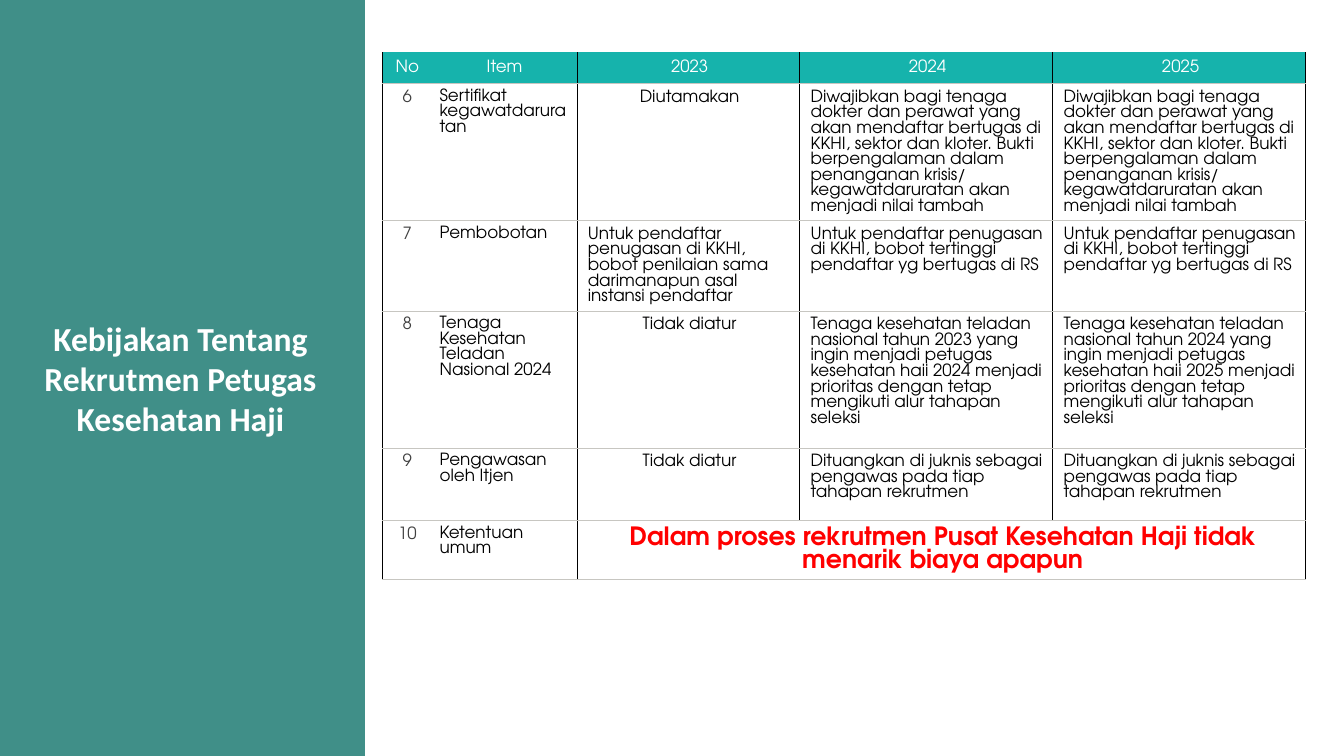
from dataclasses import dataclass
from itertools import product

from lxml import etree
from pptx import Presentation
from pptx import util as u
from pptx.dml.color import RGBColor
from pptx.enum import shapes, text
from pptx.oxml import ns

GRID_COLUMNS, GRID_ROWS = 1333, 750
WIDTH, HEIGHT = u.Inches(13.33), u.Inches(7.5)

PANEL_GREEN = RGBColor(0x40, 0x8F, 0x88)
HEADER_TEAL = RGBColor(0x16, 0xB3, 0xAC)
WHITE = RGBColor(0xFF, 0xFF, 0xFF)
BLACK = RGBColor(0x00, 0x00, 0x00)
NUMBER_GRAY = RGBColor(0x3F, 0x3F, 0x3F)
RULE_GRAY = RGBColor(0xC7, 0xC6, 0xC1)
RED = RGBColor(0xFF, 0x00, 0x00)

TABLE_FONT = "TeX Gyre Adventor"
TITLE_FONT = "Calibri"
LEFT, CENTER = text.PP_ALIGN.LEFT, text.PP_ALIGN.CENTER
TOP, MIDDLE = text.MSO_ANCHOR.TOP, text.MSO_ANCHOR.MIDDLE

COLUMN_SPANS = [47, 146, 221, 251, 251]
HEADINGS = ["No", "Item", "2023", "2024", "2025"]
UNREGULATED = "Tidak diatur"
CERTIFICATE = (
    "Diwajibkan bagi tenaga dokter dan perawat yang akan mendaftar bertugas di KKHI, "
    "sektor dan kloter. Bukti berpengalaman dalam penanganan krisis/ kegawatdaruratan "
    "akan menjadi nilai tambah"
)
WEIGHTING = "Untuk pendaftar penugasan di KKHI, bobot tertinggi pendaftar yg bertugas di RS"
EXEMPLARY = (
    "Tenaga kesehatan teladan nasional tahun {} yang ingin menjadi petugas kesehatan "
    "haii {} menjadi prioritas dengan tetap mengikuti alur tahapan seleksi"
)
OVERSIGHT = "Dituangkan di juknis sebagai pengawas pada tiap tahapan rekrutmen"
NO_FEE = "Dalam proses rekrutmen Pusat Kesehatan Haji tidak menarik biaya apapun"


@dataclass(frozen=True)
class Area:
    column: float
    row: float
    columns: float
    rows: float

    def place(self) -> tuple[int, int, int, int]:
        return across(self.column), down(self.row), across(self.columns), down(self.rows)


@dataclass(frozen=True)
class Policy:
    rows: float
    item: str
    years: tuple[str, ...]
    first_align: int = CENTER


POLICIES = [
    Policy(135, "Sertifikat kegawatdaruratan", ("Diutamakan", CERTIFICATE, CERTIFICATE)),
    Policy(88, "Pembobotan", (
        "Untuk pendaftar penugasan di KKHI, bobot penilaian sama darimanapun asal "
        "instansi pendaftar", WEIGHTING, WEIGHTING), LEFT),
    Policy(136, "Tenaga Kesehatan Teladan Nasional 2024", (
        UNREGULATED, EXEMPLARY.format(2023, 2024), EXEMPLARY.format(2024, 2025))),
    Policy(72, "Pengawasan oleh Itjen", (UNREGULATED, OVERSIGHT, OVERSIGHT)),
    Policy(58, "Ketentuan umum", (NO_FEE,)),
]
FIRST_NUMBER = 6
HEADER_ROWS = 31
TABLE_AREA = Area(379, 52, sum(COLUMN_SPANS), HEADER_ROWS + sum(p.rows for p in POLICIES))
PANEL_AREA = Area(0, 0, 362, GRID_ROWS)
TITLE_AREA = Area(25, 250, 308, 250)


def across(columns: float) -> int:
    return round(WIDTH * columns / GRID_COLUMNS)


def down(rows: float) -> int:
    return round(HEIGHT * rows / GRID_ROWS)


def write(frame, words: str, *, size: float = 12, font: str = TABLE_FONT,
          color: RGBColor = BLACK, bold: bool = False, align: int = LEFT) -> None:
    para = frame.paragraphs[0]
    para.alignment = align
    span = para.add_run()
    span.text = words
    span.font.size = u.Pt(size)
    span.font.name = font
    span.font.bold = bold
    span.font.color.rgb = color


def fill_cell(cell, words: str, *, fill: RGBColor = WHITE, anchor: int = TOP,
              tight: bool = False, **style) -> None:
    cell.fill.solid()
    cell.fill.fore_color.rgb = fill
    cell.vertical_anchor = anchor
    left, vertical, right = (0.1, 0.05, 0.1) if tight else (0.11, 0.06, 0.08)
    cell.margin_left, cell.margin_right = u.Inches(left), u.Inches(right)
    cell.margin_top = cell.margin_bottom = u.Inches(vertical)
    write(cell.text_frame, words, **style)


def rule_cell(cell, row: int, column: int) -> None:
    upright, level = (BLACK, 0.25), (RULE_GRAY, 0.75)
    edges = {
        "a:lnL": None if column == 1 else upright,
        "a:lnR": None if column == 0 else upright,
        "a:lnT": level if row else None,
        "a:lnB": level,
    }
    properties = cell._tc.get_or_add_tcPr()
    for position, (tag, pen) in enumerate(edges.items()):
        line = etree.Element(ns.qn(tag))
        if pen:
            color, points = pen
            line.set("w", str(u.Pt(points)))
            solid = etree.SubElement(line, ns.qn("a:solidFill"))
            etree.SubElement(solid, ns.qn("a:srgbClr"), val=str(color))
        else:
            etree.SubElement(line, ns.qn("a:noFill"))
        properties.insert(position, line)


def draw_panel(page) -> None:
    panel = page.shapes.add_shape(shapes.MSO_SHAPE.RECTANGLE, *PANEL_AREA.place())
    panel.shadow.inherit = False
    panel.fill.solid()
    panel.fill.fore_color.rgb = PANEL_GREEN
    panel.line.fill.background()


def draw_title(page) -> None:
    box = page.shapes.add_textbox(*TITLE_AREA.place())
    box.text_frame.word_wrap = True
    box.text_frame.vertical_anchor = MIDDLE
    write(box.text_frame, "Kebijakan Tentang Rekrutmen Petugas Kesehatan Haji",
          size=24, font=TITLE_FONT, color=WHITE, bold=True, align=CENTER)


def draw_table(page) -> None:
    row_spans = [HEADER_ROWS] + [policy.rows for policy in POLICIES]
    table = page.shapes.add_table(
        len(row_spans), len(COLUMN_SPANS), *TABLE_AREA.place()).table
    for column, span in zip(table.columns, COLUMN_SPANS):
        column.width = across(span)
    for row, span in zip(table.rows, row_spans):
        row.height = down(span)

    for column, heading in enumerate(HEADINGS):
        fill_cell(table.cell(0, column), heading, fill=HEADER_TEAL, anchor=MIDDLE,
                  color=WHITE, align=CENTER)
    for row, policy in enumerate(POLICIES, start=1):
        fill_cell(table.cell(row, 0), str(FIRST_NUMBER + row - 1),
                  color=NUMBER_GRAY, align=CENTER)
        fill_cell(table.cell(row, 1), policy.item, tight=True)
        if len(policy.years) == 1:
            table.cell(row, 2).merge(table.cell(row, 4))
            fill_cell(table.cell(row, 2), policy.years[0], anchor=MIDDLE,
                      size=18, color=RED, bold=True, align=CENTER)
            continue
        for column, words in enumerate(policy.years, start=2):
            fill_cell(table.cell(row, column), words,
                      align=policy.first_align if column == 2 else LEFT)

    for row, column in product(range(len(row_spans)), range(len(COLUMN_SPANS))):
        rule_cell(table.cell(row, column), row, column)


def main() -> None:
    deck = Presentation()
    deck.slide_width, deck.slide_height = WIDTH, HEIGHT
    page = deck.slides.add_slide(deck.slide_layouts[6])
    draw_panel(page)
    draw_table(page)
    draw_title(page)
    deck.save("out.pptx")


if __name__ == "__main__":
    main()
